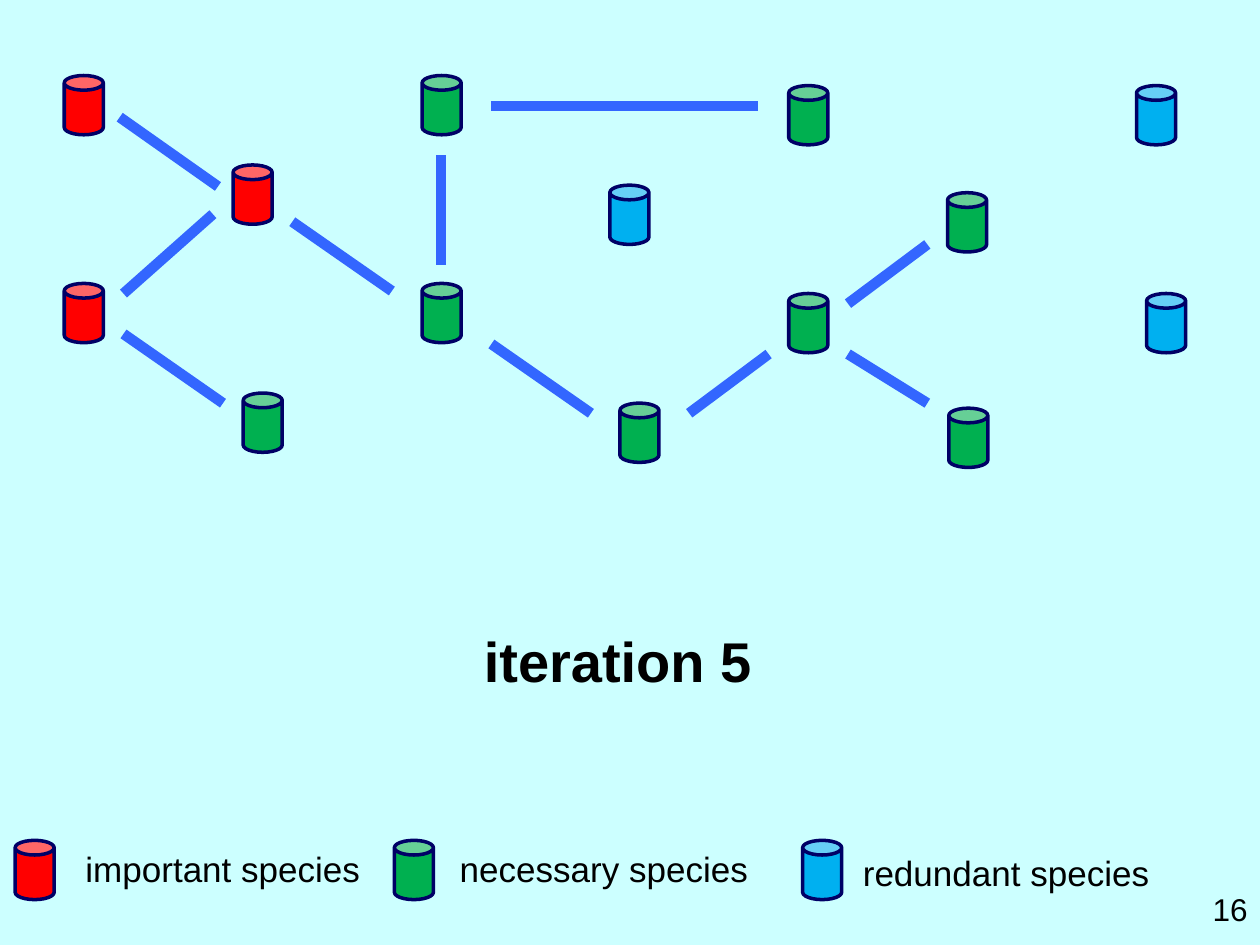
import dataclasses

import pptx
import pptx.dml.color
import pptx.enum.shapes
import pptx.enum.text
import pptx.oxml.ns
import pptx.util
from pptx.util import Inches

Anchor = pptx.enum.text.MSO_ANCHOR
Align = pptx.enum.text.PP_ALIGN


@dataclasses.dataclass(frozen=True)
class Theme:
    background: str = "CCFFFF"
    text: str = "000000"
    outline: str = "000066"
    link: str = "3366FF"
    important: str = "FF0000"
    necessary: str = "00B050"
    redundant: str = "00B0F0"
    font: str = "Arial"
    title_size: int = 32
    legend_size: int = 20
    number_size: int = 18
    outline_width: int = 2
    link_width: int = 6


THEME = Theme()
CAN_WIDTH, CAN_HEIGHT = 0.31, 0.47

# Positions are relative to the network box
SPECIES = {
    "important": [(0, 0), (0, 1.65), (1.34, 0.71)],
    "necessary": [(1.42, 2.52), (2.84, 0), (2.84, 1.65), (5.75, 0.08),
                  (7.01, 0.93), (5.75, 1.73), (4.41, 2.6), (7.02, 2.64)],
    "redundant": [(4.33, 0.87), (8.51, 0.08), (8.59, 1.73)],
}
LINKS = [
    ((0.44, 0.33), (1.22, 0.88)),
    ((1.81, 1.16), (2.6, 1.71)),
    ((0.47, 2.05), (1.26, 2.6)),
    ((0.47, 1.73), (1.18, 1.1)),
    ((3.39, 2.13), (4.18, 2.68)),
    ((2.99, 1.5), (2.99, 0.63)),
    ((3.39, 0.24), (5.51, 0.24)),
    ((4.96, 2.68), (5.59, 2.21)),
    ((6.22, 1.81), (6.85, 1.34)),
    ((6.85, 2.6), (6.22, 2.21)),
]
# Kind, can offset, label offset, label top offset, label width
LEGEND = [
    ("important", 0, 0.46, 0.01, 2.7),
    ("necessary", 3.01, 3.43, 0.01, 2.7),
    ("redundant", 6.25, 6.63, 0.04, 2.96),
]


def rgb(value):
    return pptx.dml.color.RGBColor.from_string(value)


def write_text(shape, text, *, size, bold=False, align=Align.LEFT,
               anchor=Anchor.TOP, wrap=True):
    frame = shape.text_frame
    frame.text = text
    frame.word_wrap = wrap
    frame.auto_size = pptx.enum.text.MSO_AUTO_SIZE.NONE
    frame.vertical_anchor = anchor
    paragraph = frame.paragraphs[0]
    paragraph.alignment = align
    paragraph.line_spacing = 1.0
    paragraph.space_before = pptx.util.Pt(0)
    font = paragraph.runs[0].font
    font.name = THEME.font
    font.size = pptx.util.Pt(size)
    font.bold = bold
    font.color.rgb = rgb(THEME.text)


def add_text(slide, left, top, width, height, text, **text_format):
    box = slide.shapes.add_textbox(Inches(left), Inches(top), Inches(width), Inches(height))
    write_text(box, text, **text_format)


def add_can(slide, kind, left, top):
    can = slide.shapes.add_shape(
        pptx.enum.shapes.MSO_SHAPE.CAN,
        Inches(left), Inches(top), Inches(CAN_WIDTH), Inches(CAN_HEIGHT))
    can.adjustments[0] = 0.376
    can.shadow.inherit = False
    can.fill.solid()
    can.fill.fore_color.rgb = rgb(getattr(THEME, kind))
    can.line.color.rgb = rgb(THEME.outline)
    can.line.width = pptx.util.Pt(THEME.outline_width)


def add_link(slide, left, top, start, end):
    link = slide.shapes.add_connector(
        pptx.enum.shapes.MSO_CONNECTOR.STRAIGHT,
        Inches(left + start[0]), Inches(top + start[1]),
        Inches(left + end[0]), Inches(top + end[1]))
    link.line.color.rgb = rgb(THEME.link)
    link.line.width = pptx.util.Pt(THEME.link_width)
    properties = link._element.spPr
    properties.append(properties.makeelement(pptx.oxml.ns.qn("a:effectLst"), {}))


def add_network(slide, left, top):
    for kind, positions in SPECIES.items():
        for x, y in positions:
            add_can(slide, kind, left + x, top + y)
    for start, end in LINKS:
        add_link(slide, left, top, start, end)


def add_title(slide, left, top, width, height):
    title = slide.shapes.title
    title.left, title.top = Inches(left), Inches(top)
    title.width, title.height = Inches(width), Inches(height)
    write_text(title, "iteration 5", size=THEME.title_size, bold=True, wrap=False)


def add_legend(slide, left, top):
    for kind, can_x, label_x, label_y, label_width in LEGEND:
        add_can(slide, kind, left + can_x, top)
        add_text(slide, left + label_x, top + label_y, label_width, 0.44,
                 f"{kind} species", size=THEME.legend_size)


def main():
    presentation = pptx.Presentation()
    presentation.slide_width, presentation.slide_height = Inches(10), Inches(7.5)
    title_only = presentation.slide_layouts[5]
    slide = presentation.slides.add_slide(title_only)
    slide.background.fill.solid()
    slide.background.fill.fore_color.rgb = rgb(THEME.background)

    add_network(slide, 0.51, 0.6)
    add_title(slide, 3.74, 4.92, 2.34, 0.64)
    add_legend(slide, 0.12, 6.67)
    # Slide number
    add_text(slide, 9.17, 7, 0.83, 0.41, "16", size=THEME.number_size,
             align=Align.RIGHT, anchor=Anchor.BOTTOM)
    presentation.save("out.pptx")


if __name__ == "__main__":
    main()
